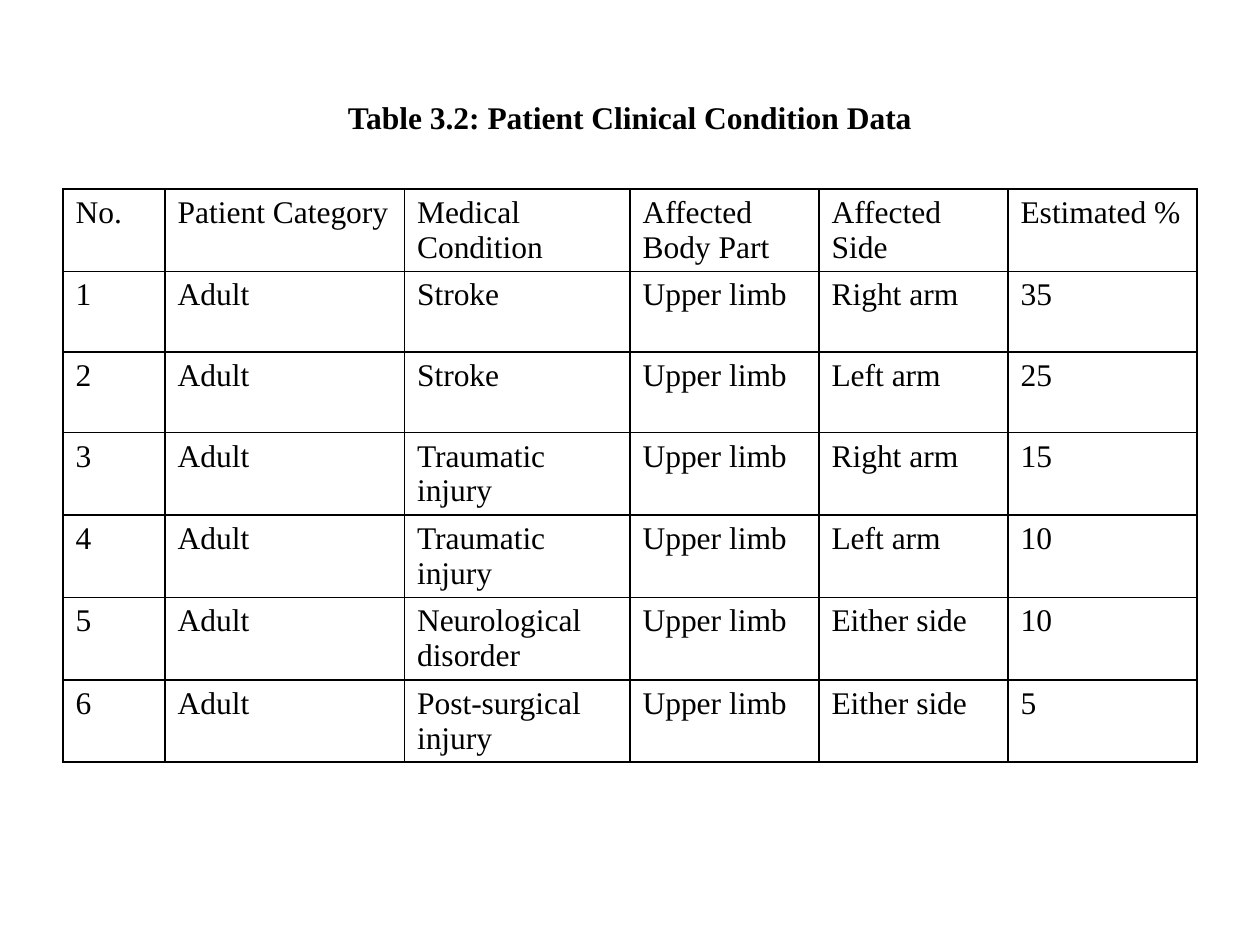
from lxml import etree
from pptx import Presentation
from pptx.dml.color import RGBColor
from pptx.enum.text import MSO_ANCHOR, PP_ALIGN
from pptx.oxml.ns import qn
from pptx.util import Inches, Pt

MIDDLE = MSO_ANCHOR.MIDDLE
CENTER = PP_ALIGN.CENTER
BLACK = RGBColor(0x00, 0x00, 0x00)
FONT = "Times New Roman"
TEXT_SIZE = Pt(18)
BORDER_WIDTH = Pt(1)

# Content
TITLE = "Table 3.2: Patient Clinical Condition Data"
ROWS = [
    ("No.", "Patient Category", "Medical Condition", "Affected Body Part", "Affected Side", "Estimated %"),
    ("1", "Adult", "Stroke", "Upper limb", "Right arm", "35"),
    ("2", "Adult", "Stroke", "Upper limb", "Left arm", "25"),
    ("3", "Adult", "Traumatic injury", "Upper limb", "Right arm", "15"),
    ("4", "Adult", "Traumatic injury", "Upper limb", "Left arm", "10"),
    ("5", "Adult", "Neurological disorder", "Upper limb", "Either side", "10"),
    ("6", "Adult", "Post-surgical injury", "Upper limb", "Either side", "5"),
]
COLUMN_WIDTHS = [0.81, 1.9, 1.79, 1.5, 1.5, 1.5]
ROW_HEIGHT = 0.64


def set_font(paragraph, bold=False):
    font = paragraph.font
    font.name = FONT
    font.size = TEXT_SIZE
    font.bold = bold
    font.color.rgb = BLACK


def set_borders(cell):
    properties = cell._tc.get_or_add_tcPr()
    for side in ("lnL", "lnR", "lnT", "lnB"):
        line = etree.SubElement(properties, qn(f"a:{side}"), w=str(BORDER_WIDTH))
        fill = etree.SubElement(line, qn("a:solidFill"))
        etree.SubElement(fill, qn("a:srgbClr"), val=str(BLACK))


def add_title(page):
    title = page.shapes.title
    title.left, title.top = Inches(0.5), Inches(0.3)
    title.width, title.height = Inches(9), Inches(1.25)
    title.text_frame.text = TITLE
    title.text_frame.vertical_anchor = MIDDLE
    paragraph = title.text_frame.paragraphs[0]
    paragraph.alignment = CENTER
    set_font(paragraph, bold=True)


def add_condition_table(page):
    table = page.shapes.add_table(
        len(ROWS), len(COLUMN_WIDTHS), Inches(0.5), Inches(1.5),
        Inches(sum(COLUMN_WIDTHS)), Inches(ROW_HEIGHT * len(ROWS))).table
    table.first_row = False
    table.horz_banding = False
    for column, width in zip(table.columns, COLUMN_WIDTHS):
        column.width = Inches(width)
    for row, texts in zip(table.rows, ROWS):
        row.height = Inches(ROW_HEIGHT)
        for cell, text in zip(row.cells, texts):
            cell.text = text
            set_font(cell.text_frame.paragraphs[0])
            set_borders(cell)
            cell.fill.background()


def main():
    deck = Presentation()
    deck.slide_width, deck.slide_height = Inches(10), Inches(7.5)
    title_only = deck.slide_layouts[5]
    page = deck.slides.add_slide(title_only)
    add_title(page)
    add_condition_table(page)
    deck.save("out.pptx")


if __name__ == "__main__":
    main()
